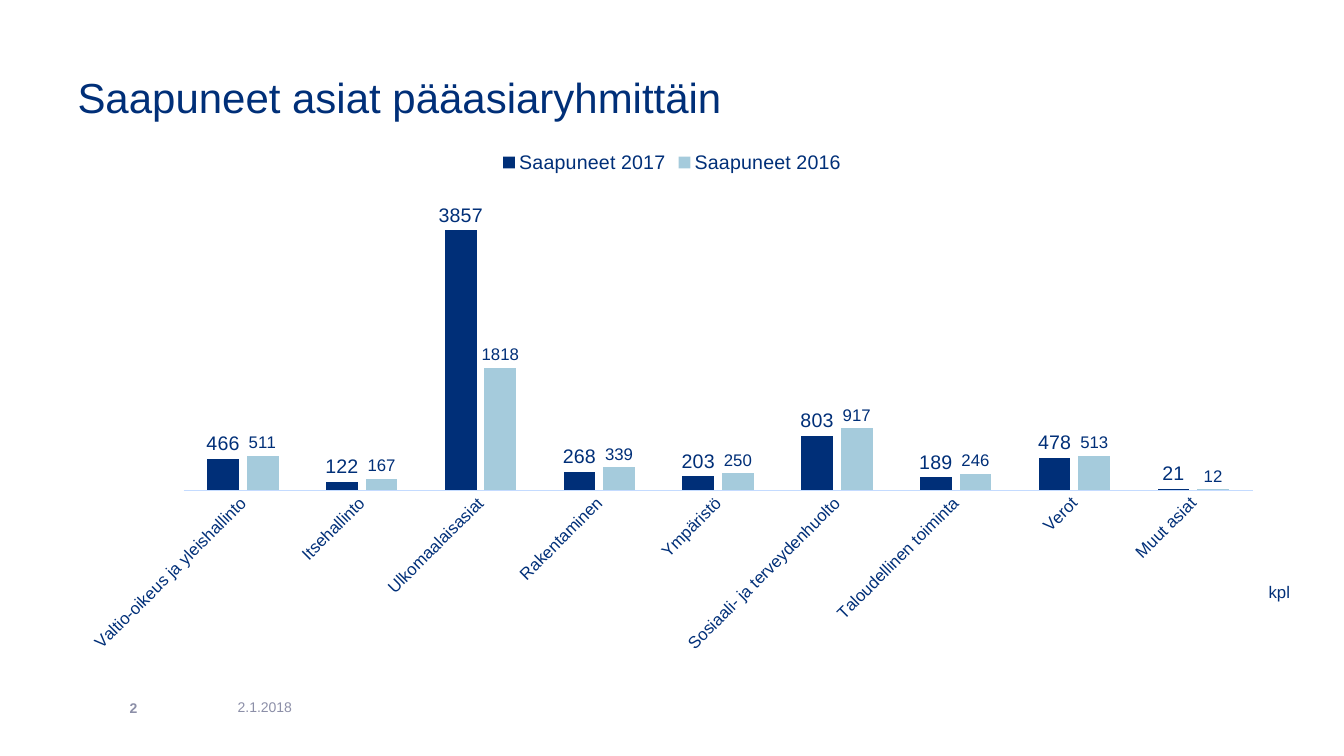
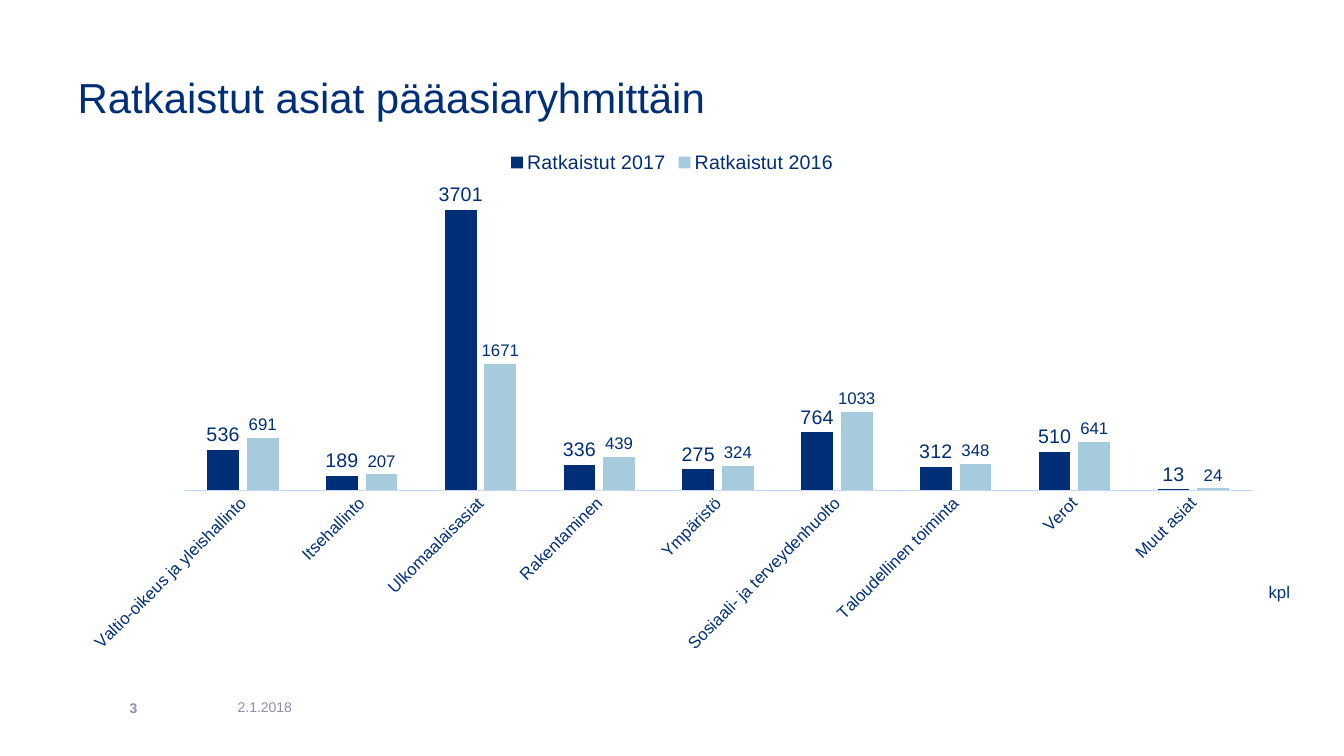
from dataclasses import dataclass

from lxml.etree import SubElement
from pptx import Presentation
from pptx.chart.data import CategoryChartData
from pptx.dml.color import RGBColor
from pptx.enum.chart import XL_CHART_TYPE, XL_LABEL_POSITION, XL_LEGEND_POSITION, XL_TICK_MARK
from pptx.enum.text import MSO_ANCHOR, MSO_AUTO_SIZE, PP_ALIGN
from pptx.oxml.ns import qn
from pptx.util import Cm, Pt


@dataclass(frozen=True)
class Theme:
    font: str = "Arial"
    navy: str = "002F78"
    light: str = "A5CBDC"
    axis: str = "C4DBFF"
    grey: str = "8C8FA8"
    title: int = 30
    legend: int = 14
    label: int = 12
    small: int = 10


@dataclass(frozen=True)
class Box:
    left: float
    top: float
    width: float
    height: float

    def lengths(self) -> tuple[Cm, Cm, Cm, Cm]:
        return Cm(self.left), Cm(self.top), Cm(self.width), Cm(self.height)


@dataclass(frozen=True)
class ChartSlide:
    number: int
    subject: str
    axis_max: int
    current: tuple[int, ...]
    previous: tuple[int, ...]


THEME = Theme()
TITLE = Box(1.7, 1.32, 30.48, 2.21)
CHART = Box(1.7, 3.53, 30.48, 13.21)
DATE = Box(5.74, 17.3, 4.52, 1.02)
NUMBER = Box(3.02, 17.32, 2.72, 1.02)
UNIT = Box(31.72, 14.53, 1.19, 0.76)
PLOT = {"x": 0.096, "y": 0.09, "w": 0.884, "h": 0.578}

CATEGORIES = (
    "Valtio-oikeus ja yleishallinto",
    "Itsehallinto",
    "Ulkomaalaisasiat",
    "Rakentaminen",
    "Ympäristö",
    "Sosiaali- ja terveydenhuolto",
    "Taloudellinen toiminta",
    "Verot",
    "Muut asiat",
)
SLIDES = (
    ChartSlide(
        2, "Saapuneet", 4500,
        (466, 122, 3857, 268, 203, 803, 189, 478, 21),
        (511, 167, 1818, 339, 250, 917, 246, 513, 12),
    ),
    ChartSlide(
        3, "Ratkaistut", 4000,
        (536, 189, 3701, 336, 275, 764, 312, 510, 13),
        (691, 207, 1671, 439, 324, 1033, 348, 641, 24),
    ),
)


def style_font(font, size: int, color: str = THEME.navy, bold: bool = False) -> None:
    font.name = THEME.font
    font.size = Pt(size)
    font.bold = bold
    font.color.rgb = RGBColor.from_string(color)


def write(sp, text: str, *, size: int, color: str = THEME.navy, bold: bool = False,
          anchor: MSO_ANCHOR = MSO_ANCHOR.MIDDLE, wrap: bool = True) -> None:
    tf = sp.text_frame
    tf.word_wrap = wrap
    tf.auto_size = MSO_AUTO_SIZE.NONE
    tf.vertical_anchor = anchor
    p = tf.paragraphs[0]
    p.alignment = PP_ALIGN.LEFT
    r = p.add_run()
    r.text = text
    style_font(r.font, size, color, bold)


def set_plot_layout(chart) -> None:
    plot_area = chart.plots[0]._element.getparent()
    for old in plot_area.findall(qn("c:layout")):
        plot_area.remove(old)
    layout = SubElement(plot_area, qn("c:layout"))
    plot_area.insert(0, layout)
    manual = SubElement(layout, qn("c:manualLayout"))
    settings = {"layoutTarget": "inner", "xMode": "edge", "yMode": "edge", **PLOT}
    for name, value in settings.items():
        SubElement(manual, qn(f"c:{name}")).set("val", str(value))


def style_axes(chart, maximum: int) -> None:
    cat = chart.category_axis
    cat.major_tick_mark = cat.minor_tick_mark = XL_TICK_MARK.NONE
    cat.has_major_gridlines = False
    style_font(cat.tick_labels.font, THEME.label)
    cat.format.line.color.rgb = RGBColor.from_string(THEME.axis)
    cat.format.line.width = Pt(0.75)
    body = cat._element.find(qn("c:txPr")).find(qn("a:bodyPr"))
    body.set("rot", "-2700000")
    body.set("vert", "horz")
    val = chart.value_axis
    val.minimum_scale = 0
    val.maximum_scale = maximum
    val.has_major_gridlines = False
    val.visible = False


def add_column_chart(s, content: ChartSlide) -> None:
    data = CategoryChartData(number_format="0")
    data.categories = CATEGORIES
    data.add_series(f"{content.subject} 2017", content.current)
    data.add_series(f"{content.subject} 2016", content.previous)
    chart = s.shapes.add_chart(XL_CHART_TYPE.COLUMN_CLUSTERED, *CHART.lengths(), data).chart
    chart.has_title = False
    style_font(chart.font, THEME.small)
    chart.has_legend = True
    chart.legend.position = XL_LEGEND_POSITION.TOP
    chart.legend.include_in_layout = False
    style_font(chart.legend.font, THEME.legend)
    plot = chart.plots[0]
    plot.vary_by_categories = False
    plot.gap_width = 150
    plot.overlap = -25
    formats = ((THEME.navy, THEME.legend), (THEME.light, THEME.label))
    for series, (color, size) in zip(plot.series, formats):
        series.invert_if_negative = False
        series.format.fill.solid()
        series.format.fill.fore_color.rgb = RGBColor.from_string(color)
        labels = series.data_labels
        labels.show_value = True
        labels.position = XL_LABEL_POSITION.OUTSIDE_END
        style_font(labels.font, size)
    style_axes(chart, content.axis_max)
    set_plot_layout(chart)


def add_slide(prs, content: ChartSlide) -> None:
    s = prs.slides.add_slide(prs.slide_layouts.get_by_name("Title Only"))
    title = s.shapes.title
    title.left, title.top, title.width, title.height = TITLE.lengths()
    write(title, f"{content.subject} asiat pääasiaryhmittäin", size=THEME.title)
    add_column_chart(s, content)
    add_box = s.shapes.add_textbox
    write(add_box(*DATE.lengths()), "2.1.2018", size=THEME.small, color=THEME.grey)
    write(add_box(*NUMBER.lengths()), str(content.number),
          size=THEME.small, color=THEME.grey, bold=True)
    write(add_box(*UNIT.lengths()), "kpl", size=THEME.label,
          anchor=MSO_ANCHOR.TOP, wrap=False)


def main() -> None:
    prs = Presentation()
    prs.slide_width, prs.slide_height = Cm(33.87), Cm(19.05)
    for content in SLIDES:
        add_slide(prs, content)
    prs.save("out.pptx")


if __name__ == "__main__":
    main()
